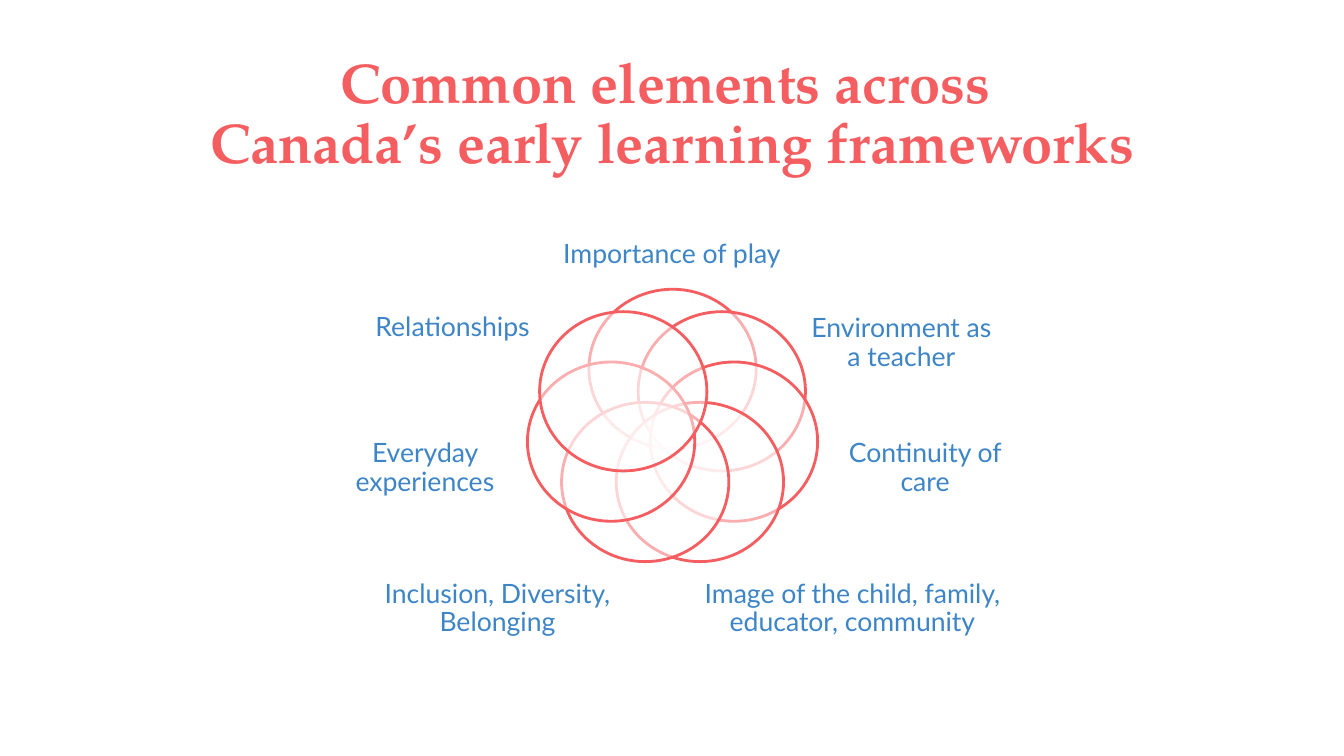
import math
from dataclasses import dataclass

import pptx
import pptx.dml.color
import pptx.enum.shapes
import pptx.enum.text
import pptx.oxml.ns
import pptx.shapes.autoshape
import pptx.slide
import pptx.text.text
import pptx.util
from lxml import etree

COLOURS = {"coral": "F55E61", "blue": "3D85C6", "white": "FFFFFF"}
SLIDE_WIDTH = pptx.util.Inches(13.33)
SLIDE_HEIGHT = pptx.util.Inches(7.5)
GRID_STEPS = 100

RING_CENTRE = (50.04, 56.67)
RING_RADII = (4.69, 7.87)
PETAL_SIZE = (12.45, 21.07)


@dataclass(frozen=True)
class Area:
    column: float
    row: float
    columns: float
    rows: float

    def place(self) -> tuple[int, int, int, int]:
        return (
            round(self.column * SLIDE_WIDTH / GRID_STEPS),
            round(self.row * SLIDE_HEIGHT / GRID_STEPS),
            round(self.columns * SLIDE_WIDTH / GRID_STEPS),
            round(self.rows * SLIDE_HEIGHT / GRID_STEPS),
        )


@dataclass(frozen=True)
class Element:
    wording: str
    area: Area


HEADING = Element(
    "Common elements across \nCanada’s early learning frameworks",
    Area(3.68, 5.6, 92.65, 19.33),
)

ELEMENTS = [
    Element("Importance of play", Area(41.71, 27.2, 16.58, 12.93)),
    Element("Environment as a teacher", Area(60.32, 38.4, 13.5, 14.13)),
    Element("Continuity of care", Area(61.29, 54.4, 15.08, 15.2)),
    Element(
        "Image of the child, family, educator, community",
        Area(51.99, 73.6, 22.88, 13.87),
    ),
    Element("Inclusion, Diversity, Belonging", Area(27.53, 73.6, 18.98, 13.87)),
    Element("Everyday experiences", Area(24.08, 54.4, 15.08, 15.2)),
    Element("Relationships", Area(26.93, 36.27, 13.5, 14.13)),
]


def colour(name: str) -> pptx.dml.color.RGBColor:
    return pptx.dml.color.RGBColor.from_string(COLOURS[name])


def write(
    frame: pptx.text.text.TextFrame,
    wording: str,
    font_name: str,
    size: float,
    ink: str,
    bold: bool = False,
) -> None:
    frame.text = wording
    frame.word_wrap = True
    frame.auto_size = pptx.enum.text.MSO_AUTO_SIZE.NONE
    frame.vertical_anchor = pptx.enum.text.MSO_ANCHOR.MIDDLE
    for paragraph in frame.paragraphs:
        paragraph.alignment = pptx.enum.text.PP_ALIGN.CENTER
        paragraph.line_spacing = 0.9
        paragraph.space_before = pptx.util.Pt(0)
        paragraph.font.name = font_name
        paragraph.font.size = pptx.util.Pt(size)
        paragraph.font.bold = bold
        paragraph.font.color.rgb = colour(ink)


def petal_area(index: int) -> Area:
    angle = index * math.tau / len(ELEMENTS)
    columns, rows = PETAL_SIZE
    return Area(
        RING_CENTRE[0] + RING_RADII[0] * math.sin(angle) - columns / 2,
        RING_CENTRE[1] - RING_RADII[1] * math.cos(angle) - rows / 2,
        columns,
        rows,
    )


def make_half_transparent(petal: pptx.shapes.autoshape.Shape) -> None:
    fill_colour = petal.fill._xPr.find(".//" + pptx.oxml.ns.qn("a:srgbClr"))
    etree.SubElement(fill_colour, pptx.oxml.ns.qn("a:alpha"), val="50000")


def draw_petal(slide: pptx.slide.Slide, area: Area) -> None:
    petal = slide.shapes.add_shape(
        pptx.enum.shapes.MSO_SHAPE.OVAL, *area.place()
    )
    petal.shadow.inherit = False
    petal.fill.solid()
    petal.fill.fore_color.rgb = colour("white")
    make_half_transparent(petal)
    petal.line.color.rgb = colour("coral")
    petal.line.width = pptx.util.Pt(2)


def draw_label(slide: pptx.slide.Slide, element: Element) -> None:
    frame = slide.shapes.add_textbox(*element.area.place()).text_frame
    frame.margin_left = frame.margin_right = 0
    frame.margin_top = frame.margin_bottom = 0
    write(frame, element.wording, "Lato", 19, "blue")


def draw_heading(slide: pptx.slide.Slide) -> None:
    heading = slide.shapes.title
    heading.left, heading.top, heading.width, heading.height = HEADING.area.place()
    write(
        heading.text_frame, HEADING.wording, "TeX Gyre Pagella", 40, "coral", bold=True
    )


def main() -> None:
    presentation = pptx.Presentation()
    presentation.slide_width = SLIDE_WIDTH
    presentation.slide_height = SLIDE_HEIGHT
    slide = presentation.slides.add_slide(
        presentation.slide_layouts.get_by_name("Title Only")
    )
    draw_heading(slide)
    for index, element in enumerate(ELEMENTS):
        draw_petal(slide, petal_area(index))
        draw_label(slide, element)
    presentation.save("out.pptx")


if __name__ == "__main__":
    main()
